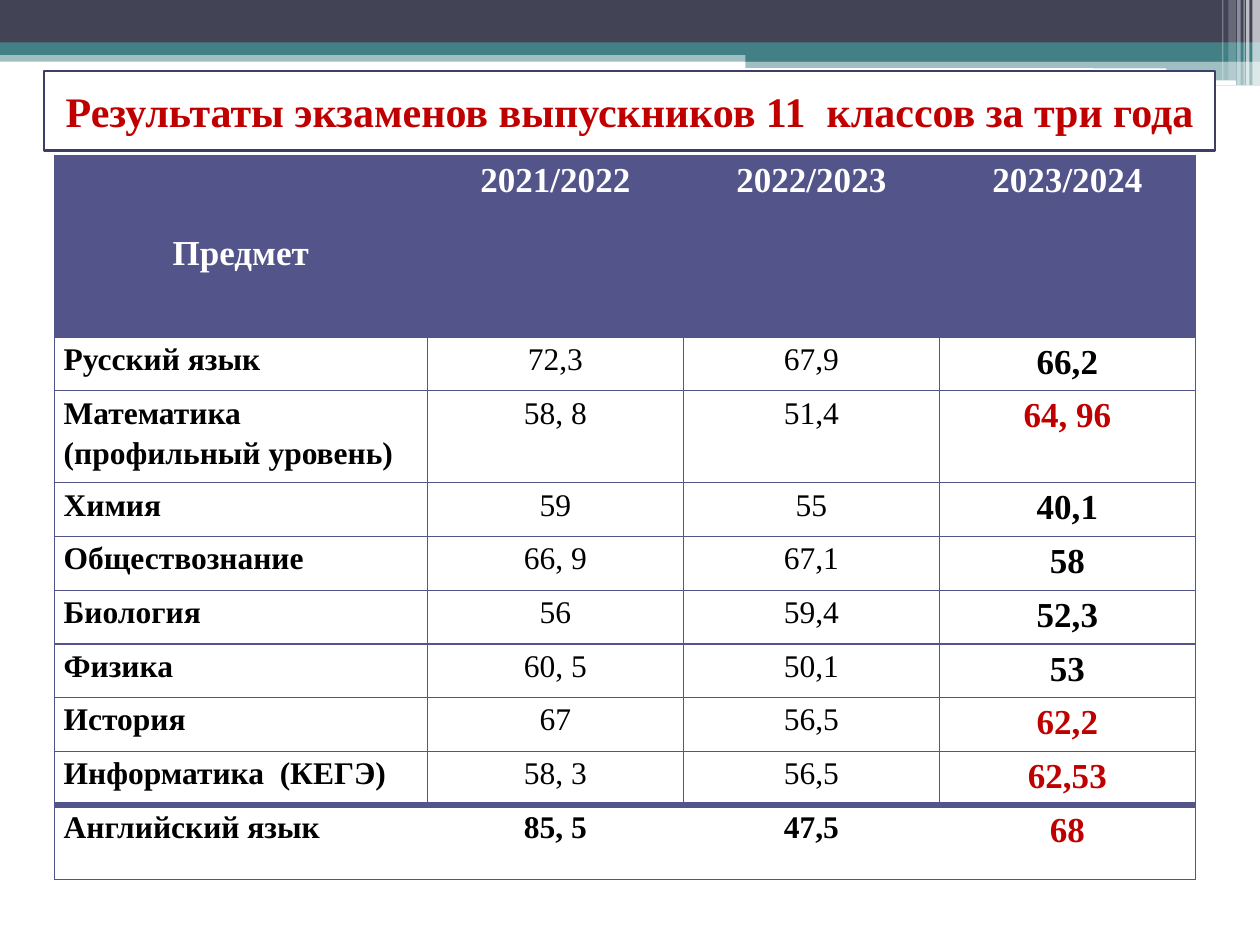
"""Build a slide with a table of graduates' exam results over three years."""
from lxml import etree
from pptx import Presentation
from pptx import util as u
from pptx.dml.color import RGBColor
from pptx.enum import shapes, text
from pptx.oxml.ns import qn

INDIGO = RGBColor(0x53, 0x54, 0x8A)
DARK_INDIGO = RGBColor(0x3D, 0x3E, 0x66)
SLATE = RGBColor(0x42, 0x44, 0x56)
TEAL = RGBColor(0x43, 0x80, 0x86)
WHITE = RGBColor(0xFF, 0xFF, 0xFF)
BLACK = RGBColor(0, 0, 0)
RED = RGBColor(0xC0, 0, 0)
FONT = "Times New Roman"

TITLE = "Результаты экзаменов выпускников 11  классов за три года"
HEADER = ["Предмет", "2021/2022", "2022/2023", "2023/2024"]
RESULTS = [
    ("Русский язык", "72,3", "67,9", "66,2"),
    ("Математика\n(профильный уровень)", "58, 8", "51,4", "64, 96"),
    ("Химия", "59", "55", "40,1"),
    ("Обществознание", "66, 9", "67,1", "58"),
    ("Биология", "56", "59,4", "52,3"),
    ("Физика", "60, 5", "50,1", "53"),
    ("История", "67", "56,5", "62,2"),
    ("Информатика  (КЕГЭ)", "58, 3", "56,5", "62,53"),
    ("Английский язык", "85, 5", "47,5", "68"),
]
HIGHLIGHTED = {"64, 96", "62,2", "62,53", "68"}
COLUMN_WIDTHS = [213.2, 146.3, 146.3, 146.3]
ROW_HEIGHTS = [104, 30.7, 52.6] + [30.7] * 6 + [42.6]

BANDS = [
    (0, 28.8, 720, 6.5, TEAL, 50),
    (0, 0, 720, 24.5, SLATE, 100),
    (0, 24.2, 720, 7.2, TEAL, 100),
    (426, 28.2, 294, 7, TEAL, 100),
    (426, 34.8, 294, 14, TEAL, 50),
]
HIGHLIGHTS = [(425.5, 39, 241, 2), (580.3, 46, 126, 2.6)]
STRIPES = [
    (715.7, 4.3, 48.7, 65),
    (712, 2, 48.7, 65),
    (710.6, 0.7, 48.7, 60),
    (707, 2, 48.7, 40),
    (702, 4.3, 46, 20),
    (698.4, 0.7, 46, 30),
]


def add_box(slide, left, top, width, height, color, opacity=100,
            kind=shapes.MSO_SHAPE.RECTANGLE):
    shape = slide.shapes.add_shape(
        kind, u.Pt(left), u.Pt(top), u.Pt(width), u.Pt(height))
    shape.shadow.inherit = False
    shape.fill.solid()
    shape.fill.fore_color.rgb = color
    shape.line.fill.background()
    if opacity < 100:
        fill_color = shape.fill._xPr.find(qn("a:solidFill"))[0]
        etree.SubElement(fill_color, qn("a:alpha"), val=str(opacity * 1000))
    return shape


def add_run(paragraph, words, size, color, bold=True):
    run = paragraph.add_run()
    run.text = words
    run.font.name = FONT
    run.font.size = u.Pt(size)
    run.font.bold = bold
    run.font.color.rgb = color


def set_borders(cell, widths):
    properties = cell._tc.get_or_add_tcPr()
    for side, width in zip("LRTB", widths):
        line = etree.SubElement(properties, qn(f"a:ln{side}"), w=str(u.Pt(width)))
        if width:
            fill = etree.SubElement(line, qn("a:solidFill"))
            etree.SubElement(fill, qn("a:srgbClr"), val=str(INDIGO))
        else:
            etree.SubElement(line, qn("a:noFill"))


def cell_style(row, column, words):
    if row == 0:
        return 20, WHITE, True
    if column == 3:
        return 20, RED if words in HIGHLIGHTED else BLACK, True
    return 18, BLACK, column == 0 or row == len(RESULTS)


def fill_cell(cell, row, column, words):
    last_row, last_column = len(RESULTS), len(HEADER) - 1
    inner = 0 if row == last_row else 0.75
    set_borders(cell, (
        inner if column else 0.75,
        inner if column < last_column else 0.75,
        4 if row == last_row else 0.75,
        4 if row == last_row - 1 else 0.75,
    ))
    if row == 0:
        cell.fill.solid()
        cell.fill.fore_color.rgb = INDIGO
    else:
        cell.fill.background()
    cell.margin_left = cell.margin_right = u.Pt(5.4)
    cell.margin_top = u.Pt(41.7 if row == column == 0 else 0)
    cell.margin_bottom = 0
    lines = words.split("\n")
    for index, line in enumerate(lines):
        frame = cell.text_frame
        paragraph = frame.add_paragraph() if index else frame.paragraphs[0]
        centred = row == 0 or column > 0
        paragraph.alignment = text.PP_ALIGN.CENTER if centred else text.PP_ALIGN.LEFT
        paragraph.line_spacing = 1.15
        paragraph.space_after = u.Pt(10 if len(lines) == 1 else 0)
        add_run(paragraph, line, *cell_style(row, column, words))


def add_results_table(slide):
    rows = [HEADER, *RESULTS]
    table = slide.shapes.add_table(
        len(rows), len(HEADER), u.Pt(31), u.Pt(88.6),
        u.Pt(sum(COLUMN_WIDTHS)), u.Pt(sum(ROW_HEIGHTS))).table
    table.first_row = table.horz_banding = False
    for column, width in zip(table.columns, COLUMN_WIDTHS):
        column.width = u.Pt(width)
    for row, height in zip(table.rows, ROW_HEIGHTS):
        row.height = u.Pt(height)
    for row, values in enumerate(rows):
        for column, words in enumerate(values):
            fill_cell(table.cell(row, column), row, column, words)


def add_title(slide):
    shape = add_box(slide, 25.2, 40.7, 669.2, 45.3, WHITE)
    shape.line.color.rgb = DARK_INDIGO
    shape.line.width = u.Pt(1.5)
    frame = shape.text_frame
    frame.word_wrap = True
    frame.vertical_anchor = text.MSO_ANCHOR.MIDDLE
    paragraph = frame.paragraphs[0]
    paragraph.alignment = text.PP_ALIGN.CENTER
    add_run(paragraph, TITLE, 24, RED)


def main():
    presentation = Presentation()
    presentation.slide_width, presentation.slide_height = u.Pt(720), u.Pt(540)
    slide = presentation.slides.add_slide(presentation.slide_layouts[6])
    for band in BANDS:
        add_box(slide, *band)
    for highlight in HIGHLIGHTS:
        add_box(slide, *highlight, WHITE, kind=shapes.MSO_SHAPE.ROUNDED_RECTANGLE)
    for left, width, height, opacity in STRIPES:
        add_box(slide, left, 0, width, height, WHITE, opacity)
    add_results_table(slide)
    add_title(slide)
    presentation.save("out.pptx")


if __name__ == "__main__":
    main()
